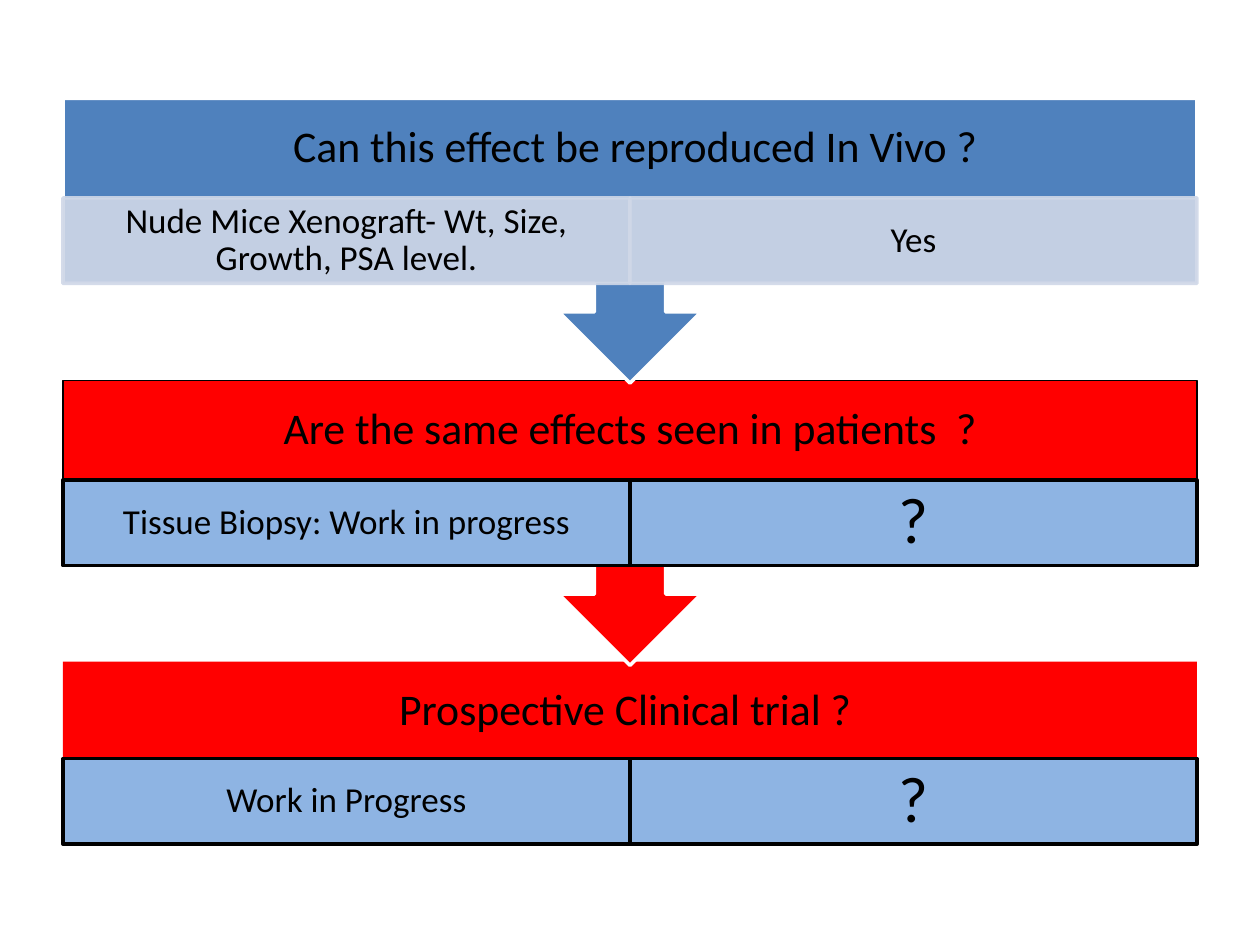
from lxml import etree
from pptx import Presentation
from pptx.dml.color import RGBColor
from pptx.enum import shapes, text
from pptx.oxml.ns import qn
from pptx.util import Inches, Pt

COLORS = {"blue": "4F81BD", "red": "FF0000", "light_blue": "8EB4E3",
          "pale": "D0D8E8", "black": "000000", "white": "FFFFFF"}
LEFT, WIDTH = 0.5, 9
HEADER_HEIGHT, CELL_HEIGHT = 0.79, 0.68


def add_box(kind, left, top, width, height, fill=None, line=None, line_width=2, alpha=None):
    shape = slide.shapes.add_shape(kind, Inches(left), Inches(top), Inches(width), Inches(height))
    shape.shadow.inherit = False
    for part, color in ((shape.fill, fill), (shape.line.fill, line)):
        if color is None:
            part.background()
            continue
        part.solid()
        part.fore_color.rgb = RGBColor.from_string(COLORS[color])
    if line:
        shape.line.width = Pt(line_width)
    if alpha:
        for color in shape._element.spPr.iter(qn("a:srgbClr")):
            etree.SubElement(color, qn("a:alpha"), val=str(alpha * 1000))
    return shape


def write_text(shape, words, size=20, side=0.16, edge=0.03):
    frame = shape.text_frame
    frame.word_wrap = True
    frame.vertical_anchor = text.MSO_ANCHOR.MIDDLE
    frame.margin_left = frame.margin_right = Inches(side)
    frame.margin_top = frame.margin_bottom = Inches(edge)
    paragraph = frame.paragraphs[0]
    paragraph.alignment = text.PP_ALIGN.CENTER
    paragraph.line_spacing = 0.9
    run = paragraph.add_run()
    run.text = words
    run.font.size = Pt(size)
    run.font.name = "Calibri"
    run.font.color.rgb = RGBColor.from_string(COLORS["black"])


presentation = Presentation()
presentation.slide_width, presentation.slide_height = Inches(10), Inches(7.5)
slide = presentation.slides.add_slide(presentation.slide_layouts[6])
RECTANGLE = shapes.MSO_SHAPE.RECTANGLE
CALLOUT = shapes.MSO_SHAPE.UP_ARROW_CALLOUT

# Stages from the bottom up, so that each arrow lies over the stage below it
stages = [
    dict(top=5.25, cells_top=6.02, kind=RECTANGLE, height=1.47, body="blue",
         header="red", header_line=None, cell="light_blue", cell_line="black", alpha=None,
         question="Prospective Clinical trial ? ", answers=["Work in Progress", "?"]),
    dict(top=3.02, cells_top=3.81, kind=CALLOUT, height=2.26, body="red",
         header="red", header_line="black", cell="light_blue", cell_line="black", alpha=None,
         question="Are the same effects seen in patients  ?",
         answers=["Tissue Biopsy: Work in progress", "?"]),
    dict(top=0.78, cells_top=1.57, kind=CALLOUT, height=2.26, body="blue",
         header=None, header_line=None, cell="pale", cell_line="pale", alpha=90,
         question=" Can this effect be reproduced In Vivo ?",
         answers=["Nude Mice Xenograft- Wt, Size, Growth, PSA level.", "Yes"]),
]

for stage in stages:
    # Body, with the arrow turned to point down
    body = add_box(stage["kind"], LEFT, stage["top"], WIDTH, stage["height"],
                   fill=stage["body"], line="white")
    if stage["kind"] == CALLOUT:
        body.rotation = 180

    # Question
    header = add_box(RECTANGLE, LEFT, stage["top"], WIDTH, HEADER_HEIGHT,
                     fill=stage["header"], line=stage["header_line"], line_width=0.75)
    write_text(header, stage["question"], size=25, side=0.19, edge=0.19)

    # Method and answer, side by side
    for column, answer in enumerate(stage["answers"]):
        cell = add_box(RECTANGLE, LEFT + column * WIDTH / 2, stage["cells_top"], WIDTH / 2,
                       CELL_HEIGHT, fill=stage["cell"], line=stage["cell_line"],
                       alpha=stage["alpha"])
        if answer == "?":
            write_text(cell, answer, size=37, side=0.29, edge=0.05)
        else:
            write_text(cell, answer)

presentation.save("out.pptx")
